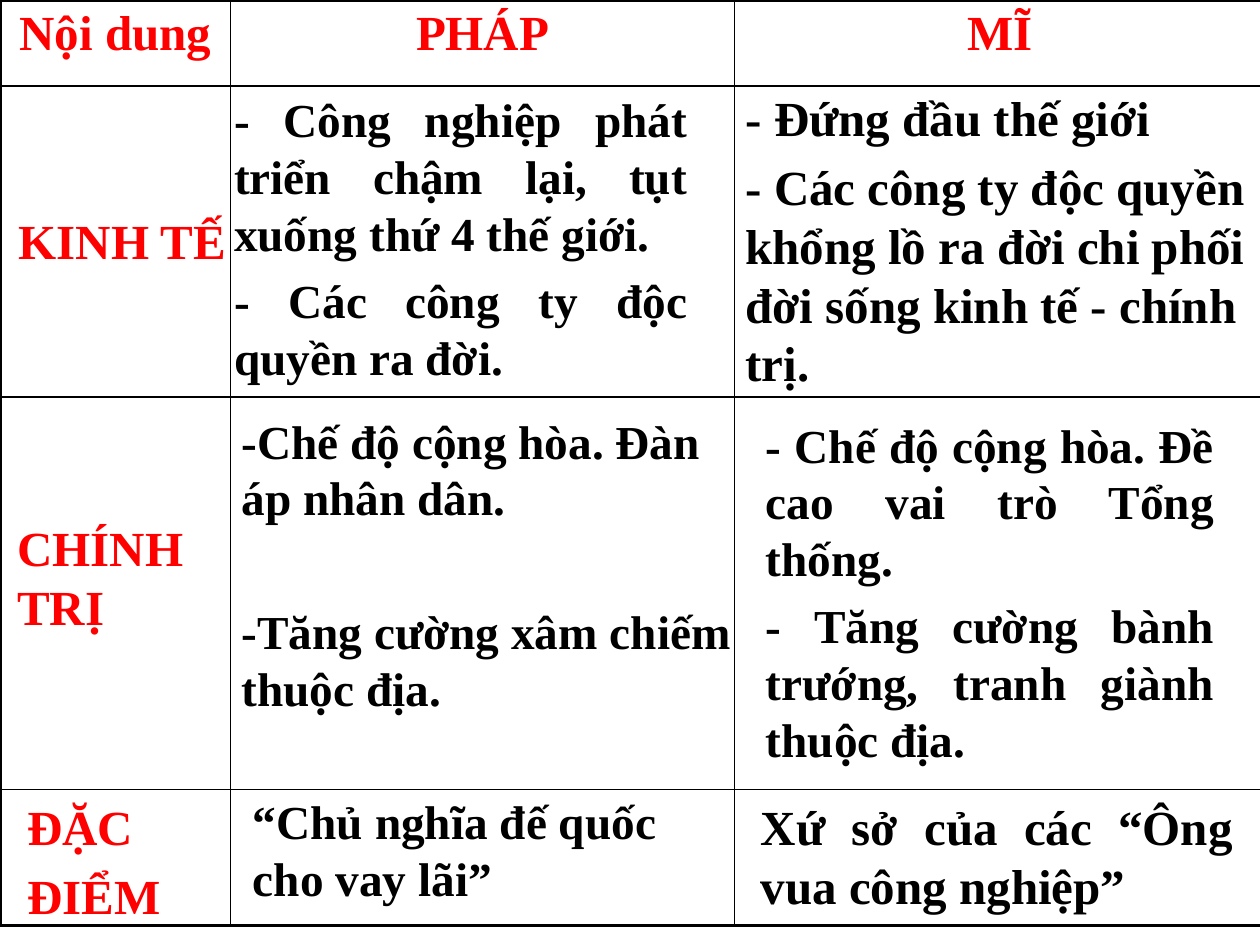
import pptx
import pptx.dml.color
import pptx.enum.text
import pptx.oxml
import pptx.oxml.ns
import pptx.util
from dataclasses import dataclass

Cm = pptx.util.Cm
Pt = pptx.util.Pt
Align = pptx.enum.text.PP_ALIGN


@dataclass(frozen=True)
class Theme:
    font: str = "Times New Roman"
    heading: str = "FF0000"
    body: str = "000000"
    border: str = "000000"
    large: float = 28
    normal: float = 27
    paragraph_gap: float = 6
    wide_gap: float = 44
    inner_line: float = 1
    outer_line: float = 2.25


THEME = Theme()
COLUMN_WIDTHS = [4.65, 10.16, 10.69]
ROW_HEIGHTS = [1.73, 6.27, 7.92, 2.74]
HEADERS = ["Nội dung", "PHÁP", "MĨ"]

# Row labels: left, top, width, height in cm, then paragraphs
LABELS = [
    (0.13, 4.11, 5.49, 1.45, ["KINH TẾ"]),
    (0.1, 10.31, 4.37, 2.67, ["CHÍNH TRỊ"]),
    (0.3, 15.93, 4.32, 2.9, ["ĐẶC", "ĐIỂM"]),
]

# Cell contents: left, top, width, height in cm, size, alignment, gap, paragraphs
CONTENTS = [
    (4.47, 1.7, 9.63, 6.3, THEME.normal, Align.JUSTIFY, THEME.paragraph_gap,
     ["- Công nghiệp phát triển chậm lại, tụt xuống thứ 4 thế giới.",
      "- Các công ty độc quyền ra đời."]),
    (14.78, 1.63, 10.85, 6.48, THEME.large, Align.LEFT, THEME.paragraph_gap,
     ["- Đứng đầu thế giới",
      "- Các công ty độc quyền khổng lồ ra đời chi phối đời sống kinh tế - chính trị."]),
    (4.62, 8.18, 10.49, 6.5, THEME.normal, Align.LEFT, THEME.wide_gap,
     ["-Chế độ cộng hòa. Đàn áp nhân dân.",
      "-Tăng cường xâm chiếm thuộc địa."]),
    (15.19, 8.26, 9.53, 7.42, THEME.normal, Align.JUSTIFY, THEME.paragraph_gap,
     ["- Chế độ cộng hòa. Đề cao vai trò Tổng thống.",
      "- Tăng cường bành trướng, tranh giành thuộc địa."]),
    (4.85, 15.85, 10.01, 2.67, THEME.normal, Align.LEFT, THEME.paragraph_gap,
     ["“Chủ nghĩa đế quốc cho vay lãi”"]),
    (15.09, 15.93, 10.01, 2.67, THEME.large, Align.JUSTIFY, THEME.paragraph_gap,
     ["Xứ sở của các “Ông vua công nghiệp”"]),
]


def write_paragraphs(text_frame, texts, size, color, alignment, gap=THEME.paragraph_gap):
    for index, text in enumerate(texts):
        paragraph = text_frame.add_paragraph() if index else text_frame.paragraphs[0]
        paragraph.alignment = alignment
        paragraph.space_before = Pt(gap if index else 0)
        run = paragraph.add_run()
        run.text = text
        run.font.name = THEME.font
        run.font.size = Pt(size)
        run.font.bold = True
        run.font.color.rgb = pptx.dml.color.RGBColor.from_string(color)


def add_text(slide, left, top, width, height, texts, size, color, alignment, gap):
    box = slide.shapes.add_textbox(Cm(left), Cm(top), Cm(width), Cm(height))
    box.text_frame.word_wrap = True
    box.text_frame.auto_size = pptx.enum.text.MSO_AUTO_SIZE.SHAPE_TO_FIT_TEXT
    write_paragraphs(box.text_frame, texts, size, color, alignment, gap)


def set_borders(cell, outer_sides):
    properties = cell._tc.get_or_add_tcPr()
    for side in "LRTB":
        width = THEME.outer_line if side in outer_sides else THEME.inner_line
        properties.append(pptx.oxml.parse_xml(
            f'<a:ln{side} {pptx.oxml.ns.nsdecls("a")} w="{int(Pt(width))}">'
            f'<a:solidFill><a:srgbClr val="{THEME.border}"/></a:solidFill></a:ln{side}>'))


def add_comparison_table(slide):
    rows, columns = len(ROW_HEIGHTS), len(COLUMN_WIDTHS)
    table = slide.shapes.add_table(
        rows, columns, 0, 0, Cm(sum(COLUMN_WIDTHS)), Cm(sum(ROW_HEIGHTS))).table
    table.first_row = table.horz_banding = False
    for column, width in zip(table.columns, COLUMN_WIDTHS):
        column.width = Cm(width)
    for row, height in zip(table.rows, ROW_HEIGHTS):
        row.height = Cm(height)
    for row in range(rows):
        for column in range(columns):
            cell = table.cell(row, column)
            edges = {"L": column == 0, "R": column == columns - 1,
                     "T": row == 0, "B": row == rows - 1}
            set_borders(cell, [side for side, outer in edges.items() if outer])
            cell.fill.background()
    for column, header in enumerate(HEADERS):
        write_paragraphs(table.cell(0, column).text_frame, [header],
                         THEME.large, THEME.heading, Align.CENTER)


def main():
    presentation = pptx.Presentation()
    presentation.slide_width, presentation.slide_height = Cm(25.4), Cm(19.05)
    slide = presentation.slides.add_slide(presentation.slide_layouts[6])

    # Grid with column headings
    add_comparison_table(slide)

    # Row labels
    for *frame, texts in LABELS:
        add_text(slide, *frame, texts, THEME.large, THEME.heading,
                 Align.LEFT, THEME.paragraph_gap)

    # Comparison of the two countries
    for *frame, size, alignment, gap, texts in CONTENTS:
        add_text(slide, *frame, texts, size, THEME.body, alignment, gap)

    presentation.save("out.pptx")


if __name__ == "__main__":
    main()
